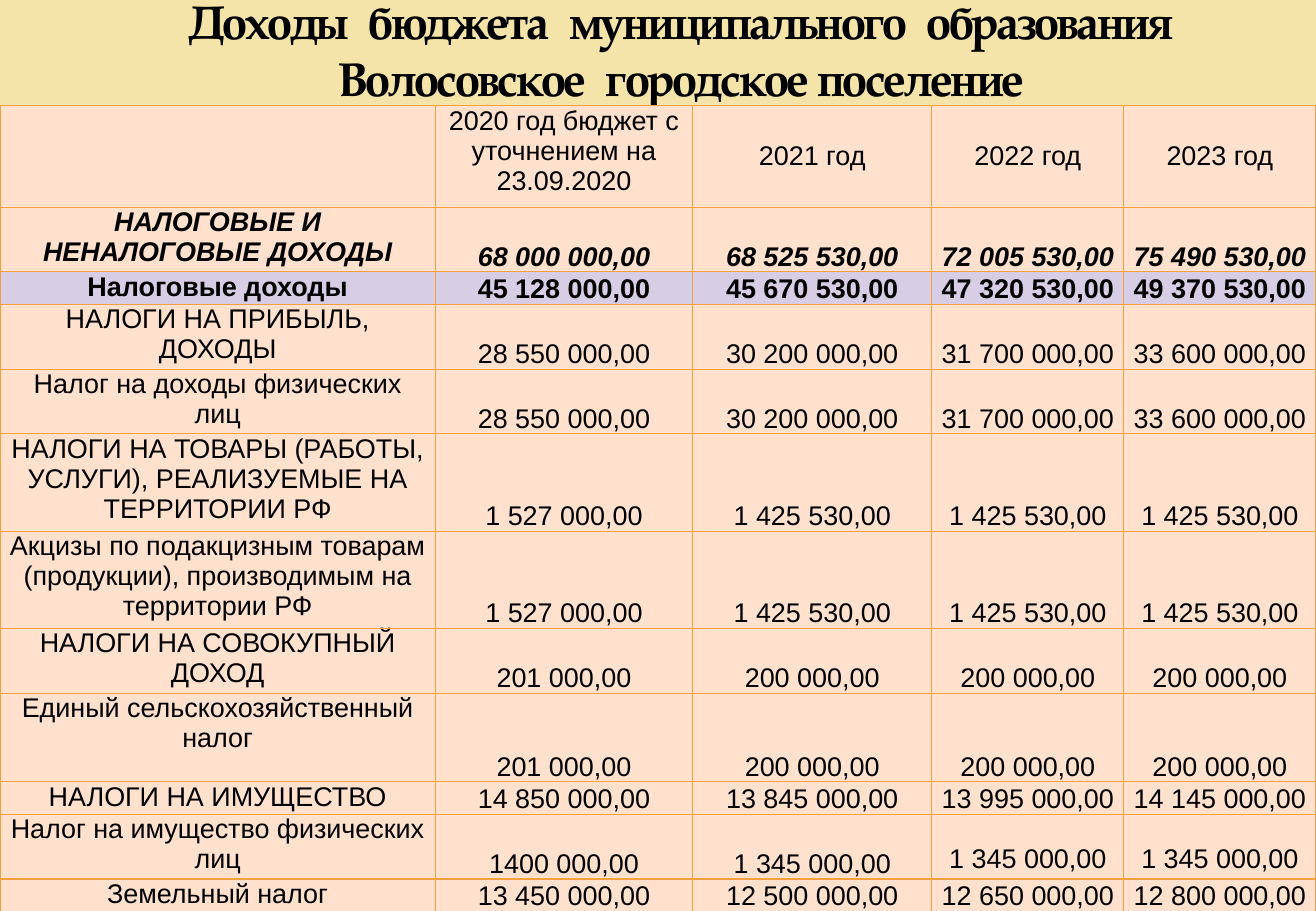
import pptx
import pptx.util
import pptx.dml.color
import pptx.enum.text
import pptx.oxml.ns
import lxml.etree

Pt = pptx.util.Pt
ANCHOR = pptx.enum.text.MSO_ANCHOR
CENTER = pptx.enum.text.PP_ALIGN.CENTER
COLORS = {
    "background": "F5E4A9",
    "cell": "FFE1CE",
    "subtotal": "D7CEE6",
    "border": "F2A141",
    "text": "000000",
}


def color(name):
    return pptx.dml.color.RGBColor.from_string(COLORS[name])


def add_run(paragraph, text, font_name, size, bold=False, italic=False):
    run = paragraph.add_run()
    run.text = text
    run.font.name = font_name
    run.font.size = Pt(size)
    run.font.bold = bold
    run.font.italic = italic
    run.font.color.rgb = color("text")
    return run


presentation = pptx.Presentation()
presentation.slide_width = Pt(779.8)
presentation.slide_height = Pt(540)
slide = presentation.slides.add_slide(presentation.slide_layouts[6])
slide.background.fill.solid()
slide.background.fill.fore_color.rgb = color("background")

# Title: tight letters, wide gaps between the words of the first line
title = slide.shapes.add_textbox(Pt(27.2), Pt(0), Pt(752.6), Pt(66.2))
title.text_frame.word_wrap = True
title.text_frame.vertical_anchor = ANCHOR.BOTTOM
paragraph = title.text_frame.paragraphs[0]
paragraph.alignment = CENTER
wide_words = ["Доходы", "бюджета", "муниципального", "образования", "Волосовское"]
title_parts = [part for word in wide_words for part in ((word, -100), (" ", 500))]
title_parts.append(("городское поселение", -100))
for text, spacing in title_parts:
    run = add_run(paragraph, text, "TeX Gyre Pagella", 28, bold=True)
    run.font._element.set("spc", str(spacing))

# Table data: row height, then the cell texts
ONE_LINE, TWO_LINES, THREE_LINES = 19.2, 38.3, 57.7
column_widths = [258, 152.4, 141.8, 113.8, 113.8]
rows = [
    (60, ["", "2020 год бюджет с уточнением на 23.09.2020", "2021 год", "2022 год", "2023 год"]),
    (TWO_LINES, ["НАЛОГОВЫЕ И НЕНАЛОГОВЫЕ ДОХОДЫ",
                 "68 000 000,00", "68 525 530,00", "72 005 530,00", "75 490 530,00"]),
    (ONE_LINE, ["Налоговые доходы",
                "45 128 000,00", "45 670 530,00", "47 320 530,00", "49 370 530,00"]),
    (TWO_LINES, ["НАЛОГИ НА ПРИБЫЛЬ, ДОХОДЫ",
                 "28 550 000,00", "30 200 000,00", "31 700 000,00", "33 600 000,00"]),
    (TWO_LINES, ["Налог на доходы физических лиц",
                 "28 550 000,00", "30 200 000,00", "31 700 000,00", "33 600 000,00"]),
    (THREE_LINES, ["НАЛОГИ НА ТОВАРЫ (РАБОТЫ, УСЛУГИ), РЕАЛИЗУЕМЫЕ НА ТЕРРИТОРИИ РФ",
                   "1 527 000,00", "1 425 530,00", "1 425 530,00", "1 425 530,00"]),
    (THREE_LINES, ["Акцизы по подакцизным товарам (продукции), производимым на территории РФ",
                   "1 527 000,00", "1 425 530,00", "1 425 530,00", "1 425 530,00"]),
    (TWO_LINES, ["НАЛОГИ НА СОВОКУПНЫЙ ДОХОД",
                 "201 000,00", "200 000,00", "200 000,00", "200 000,00"]),
    (52.4, ["Единый сельскохозяйственный налог",
            "201 000,00", "200 000,00", "200 000,00", "200 000,00"]),
    (ONE_LINE, ["НАЛОГИ НА ИМУЩЕСТВО",
                "14 850 000,00", "13 845 000,00", "13 995 000,00", "14 145 000,00"]),
    (TWO_LINES, ["Налог на имущество физических лиц",
                 "1400 000,00", "1 345 000,00", "1 345 000,00", "1 345 000,00"]),
    (ONE_LINE, ["Земельный налог",
                "13 450 000,00", "12 500 000,00", "12 650 000,00", "12 800 000,00"]),
]
TOTAL_ROW, SUBTOTAL_ROW, PROPERTY_ROW = 1, 2, 10

# Table
table = slide.shapes.add_table(
    len(rows), len(column_widths), Pt(0), Pt(62.8),
    Pt(sum(column_widths)), Pt(sum(height for height, texts in rows))).table
table.first_row = False
table.horz_banding = False
for column, width in zip(table.columns, column_widths):
    column.width = Pt(width)

for row_index, (height, texts) in enumerate(rows):
    table.rows[row_index].height = Pt(height)
    for column_index, text in enumerate(texts):
        cell = table.cell(row_index, column_index)
        cell.margin_left = cell.margin_right = Pt(4.3)
        cell.margin_top = cell.margin_bottom = Pt(0)

        # Row names on top, years in the middle, amounts at the bottom
        if column_index == 0 or (row_index == 0 and column_index == 1):
            cell.vertical_anchor = ANCHOR.TOP
        elif row_index == 0:
            cell.vertical_anchor = ANCHOR.MIDDLE
        else:
            cell.vertical_anchor = ANCHOR.BOTTOM
        if row_index == PROPERTY_ROW and column_index >= 3:
            cell.margin_bottom = Pt(3)

        # Borders come before the fill
        properties = cell._tc.get_or_add_tcPr()
        for side in ("a:lnL", "a:lnR", "a:lnT", "a:lnB"):
            line = lxml.etree.SubElement(
                properties, pptx.oxml.ns.qn(side), w=str(Pt(0.75)))
            fill = lxml.etree.SubElement(line, pptx.oxml.ns.qn("a:solidFill"))
            lxml.etree.SubElement(
                fill, pptx.oxml.ns.qn("a:srgbClr"), val=COLORS["border"])
        cell.fill.solid()
        cell.fill.fore_color.rgb = color("subtotal" if row_index == SUBTOTAL_ROW else "cell")

        if text:
            paragraph = cell.text_frame.paragraphs[0]
            paragraph.alignment = CENTER
            add_run(paragraph, text, "Arial", 16,
                    bold=row_index in (TOTAL_ROW, SUBTOTAL_ROW),
                    italic=row_index == TOTAL_ROW)

presentation.save("out.pptx")
